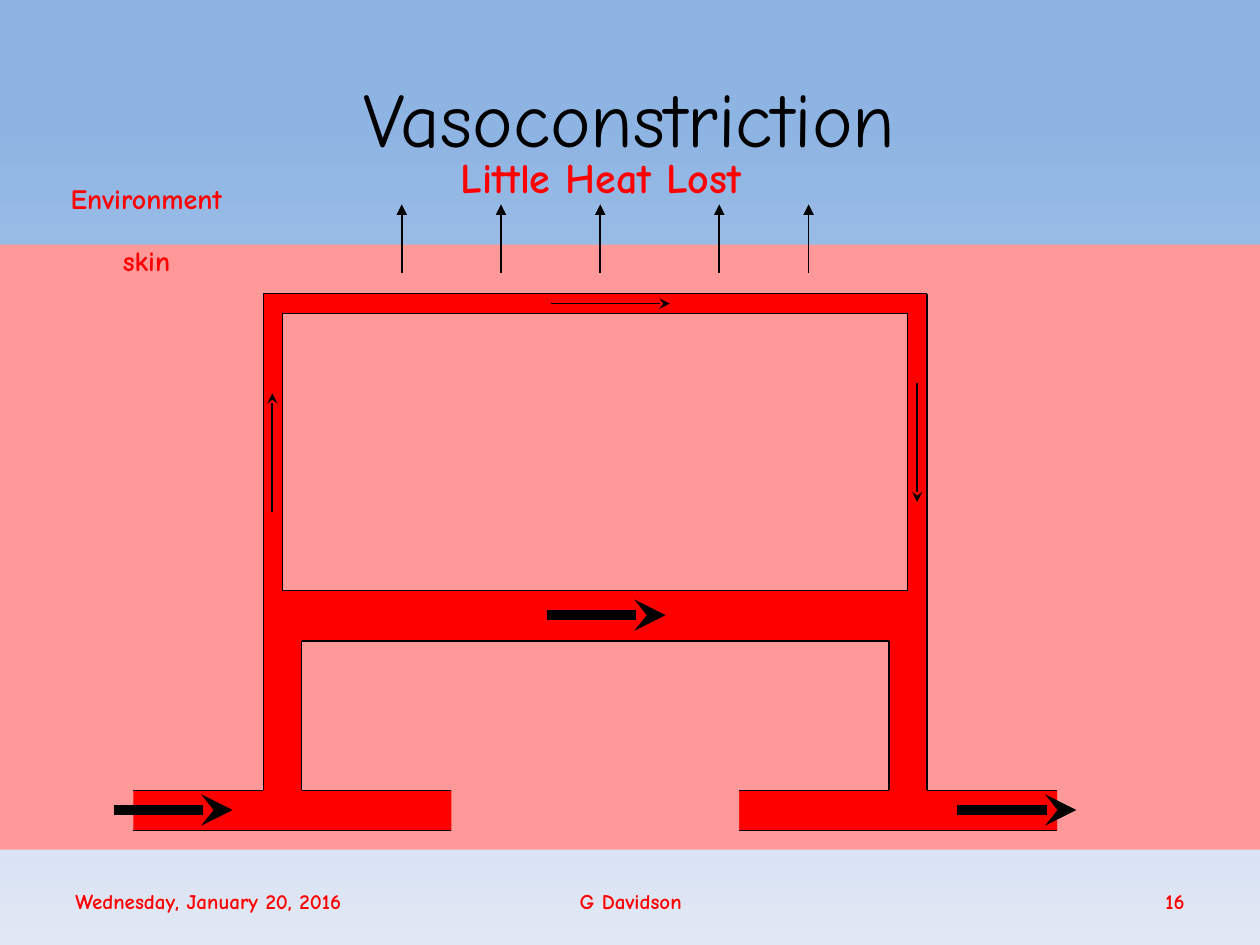
import pptx
import pptx.dml.color
import pptx.enum.shapes
import pptx.enum.text
import pptx.oxml.ns
import pptx.util
from lxml import etree

Cm = pptx.util.Cm
Pt = pptx.util.Pt
ALIGN = pptx.enum.text.PP_ALIGN
ANCHOR = pptx.enum.text.MSO_ANCHOR

BLOOD, TISSUE, INK = "FF0000", "FF9999", "000000"


def colour(code):
    return pptx.dml.color.RGBColor.from_string(code)


class Diagram:
    font_name = "Comic Neue"
    outline_width = 0.75

    def __init__(self, slide):
        self.slide = slide

    def background(self, stops):
        """Fill the slide with a gradient running from top to bottom."""
        fill = self.slide.background.fill
        fill.gradient()
        fill.gradient_angle = 270
        for stop, (position, code) in zip(fill.gradient_stops, stops):
            stop.position = position
            stop.color.rgb = colour(code)

    def text(self, words, left, top, width, height, size,
             code=BLOOD, bold=True, **layout):
        frame = self.slide.shapes.add_textbox(
            Cm(left), Cm(top), Cm(width), Cm(height)).text_frame
        alignment = layout.pop("alignment", ALIGN.CENTER)
        for name, value in {"word_wrap": True, **layout}.items():
            setattr(frame, name, value)
        paragraph = frame.paragraphs[0]
        paragraph.alignment = alignment
        run = paragraph.add_run()
        run.text = words
        style = {"name": self.font_name, "size": Pt(size), "bold": bold}
        for name, value in style.items():
            setattr(run.font, name, value)
        run.font.color.rgb = colour(code)

    def paint(self, shape, fill, outlined=False):
        shape.shadow.inherit = False
        shape.fill.solid()
        shape.fill.fore_color.rgb = colour(fill)
        if outlined:
            shape.line.color.rgb = colour(INK)
            shape.line.width = Pt(self.outline_width)
        else:
            shape.line.fill.background()

    def block(self, left, top, width, height, fill, outlined=False):
        shape = self.slide.shapes.add_shape(
            pptx.enum.shapes.MSO_SHAPE.RECTANGLE,
            Cm(left), Cm(top), Cm(width), Cm(height))
        self.paint(shape, fill, outlined)

    def outline(self, points, fill):
        corners = [(Cm(x), Cm(y)) for x, y in points]
        builder = self.slide.shapes.build_freeform(*corners[0])
        builder.add_line_segments(corners[1:], close=True)
        self.paint(builder.convert_to_shape(), fill)

    def line(self, x1, y1, x2, y2, width=outline_width, head=None):
        connector = self.slide.shapes.add_connector(
            pptx.enum.shapes.MSO_CONNECTOR.STRAIGHT,
            Cm(x1), Cm(y1), Cm(x2), Cm(y2))
        connector.line.color.rgb = colour(INK)
        connector.line.width = Pt(width)
        qn = pptx.oxml.ns.qn
        properties = connector._element.spPr
        if head:
            etree.SubElement(properties.find(qn("a:ln")), qn("a:tailEnd"), type=head)
        etree.SubElement(properties, qn("a:effectLst"))


def draw_vessels(diagram):
    centre = 12
    arm_end, outer, inner, gap = 2.69, 5.31, 6.08, 9.1
    top, deep_top, arm_top, arm_bottom = 5.92, 12.92, 15.93, 16.74

    def mirror(x):
        return 2 * centre - x

    left_wall = [(arm_end, arm_bottom), (arm_end, arm_top), (outer, arm_top), (outer, top)]
    right_wall = [(mirror(x), y) for x, y in reversed(left_wall)]
    diagram.outline(left_wall + right_wall, BLOOD)
    diagram.block(inner, deep_top, mirror(inner) - inner, arm_top - deep_top, TISSUE)
    diagram.block(gap, 15.72, mirror(gap) - gap, 1.19, TISSUE)

    diagram.line(outer, top, mirror(outer), top)
    diagram.line(inner, deep_top, mirror(inner), deep_top)
    half_edges = [
        (outer, top, outer, arm_top),
        (inner, deep_top, inner, arm_top),
        (arm_end, arm_top, outer, arm_top),
        (inner, arm_top, gap, arm_top),
        (arm_end, arm_bottom, gap, arm_bottom),
    ]
    for x1, y1, x2, y2 in half_edges:
        diagram.line(x1, y1, x2, y2)
        diagram.line(mirror(x1), y1, mirror(x2), y2)
    diagram.block(5.69, 6.32, 12.6, 5.59, TISSUE, outlined=True)


def draw_flow(diagram):
    length = 2.4
    for x, y in [(2.29, 16.33), (11.02, 12.4), (19.3, 16.33)]:
        diagram.line(x, y, x + length, y, 6, "stealth")
    for x, y, dx, dy in [(11.1, 6.12, 1, 0), (5.49, 10.33, 0, -1), (18.49, 7.72, 0, 1)]:
        diagram.line(x, y, x + dx * length, y + dy * length, 1, "stealth")
    for x in (8.1, 10.1, 12.1, 14.5, 16.3):
        diagram.line(x, 5.51, x, 4.12, 1, "triangle")


def main():
    presentation = pptx.Presentation()
    presentation.slide_width, presentation.slide_height = Cm(25.4), Cm(19.05)
    diagram = Diagram(presentation.slides.add_slide(presentation.slide_layouts[6]))
    diagram.background([(0.13, "8EB4E3"), (1, "E1E8F5")])

    middle = {"vertical_anchor": ANCHOR.MIDDLE}
    for words, left, width, alignment in [
        ("Wednesday, January 20, 2016", 1.27, 8.43, ALIGN.LEFT),
        ("G Davidson", 8.69, 8.05, ALIGN.CENTER),
        ("16", 18.21, 5.92, ALIGN.RIGHT),
    ]:
        diagram.text(words, left, 17.65, width, 1.02, 12, alignment=alignment, **middle)
    diagram.text("Vasoconstriction", 1.27, 0.76, 22.86, 3.18, 44, INK, False, **middle)

    diagram.block(0, 4.93, 25.4, 12.2, TISSUE)
    draw_vessels(diagram)
    draw_flow(diagram)
    diagram.text("Environment", 1.07, 3.53, 3.76, 0.94, 16, word_wrap=False)
    diagram.text("skin", 2.18, 4.78, 1.55, 0.94, 16, word_wrap=False)
    diagram.text("Little Heat Lost", 8.51, 2.92, 7.21, 1.27, 24)
    presentation.save("out.pptx")


if __name__ == "__main__":
    main()
